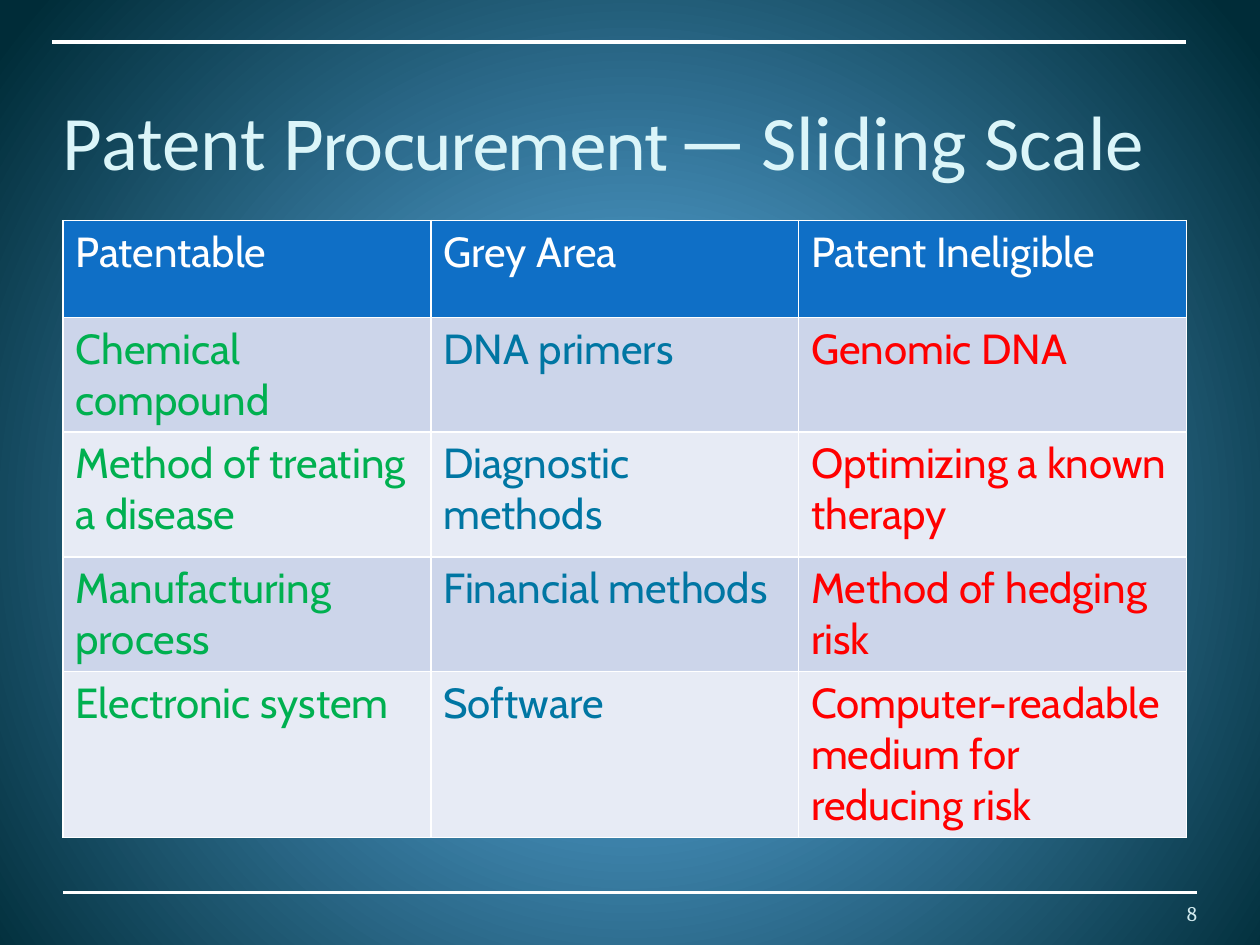
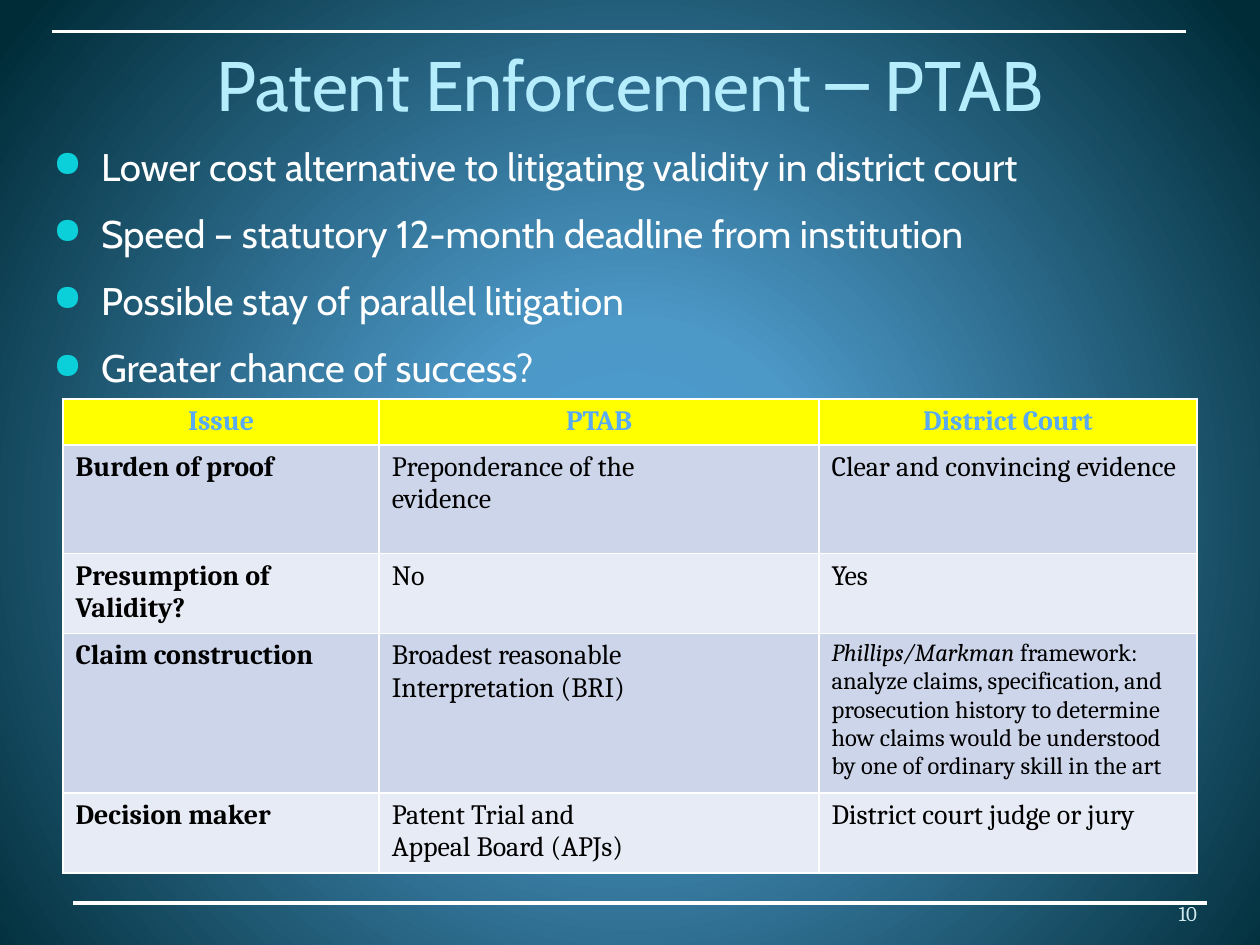
from collections import namedtuple
from dataclasses import dataclass, replace

from pptx import Presentation
from pptx.dml.color import RGBColor
from pptx.enum.shapes import MSO_CONNECTOR
from pptx.enum.text import MSO_ANCHOR, PP_ALIGN
from pptx.oxml import parse_xml
from pptx.oxml.ns import nsdecls, qn
from pptx.oxml.xmlchemy import OxmlElement as new_element
from pptx.util import Inches, Pt

Box = namedtuple("Box", "left top width height")
Rule = namedtuple("Rule", "left right row")


@dataclass(frozen=True)
class Style:
    """The look of a run of text."""
    font: str
    size: int
    color: str
    bold: bool = False
    italic: bool = False


class Theme:
    """Colours, type styles and measures shared by the slides."""
    width, height = Inches(10), Inches(7.5)
    columns, rows = 120, 90
    glow = ((0, "4AA0D6"), (25, "4C98C7"), (100, "002C38"))
    white = "FFFFFF"
    bullet = "0BD0D9"
    bands = ("CCD5EA", "E7EBF5")
    scale_header, court_header = "0F6FC6", "FFFF00"
    rule_weight, border_weight = Pt(2), Pt(1)
    scale_title = Style("Calibri", 44, "DBF5F9")
    court_title = Style("Cabin", 40, "B5EDFD")
    body = Style("Cabin", 22, white)
    scale_head = Style("Cabin", 24, white)
    scale_columns = (replace(scale_head, color="00B050"),
                     replace(scale_head, color="0076A3"),
                     replace(scale_head, color="FF0000"))
    court_head = Style("Cambria", 16, "59AAF2", bold=True)
    court_cell = Style("Cambria", 16, "000000")
    court_issue = replace(court_cell, bold=True)
    court_note = replace(court_cell, size=14)
    number = Style("Cambria", 12, "D1EAEE")


def across(columns):
    """Turn grid columns into a length."""
    return round(Theme.width * columns / Theme.columns)


def down(rows):
    """Turn grid rows into a length."""
    return round(Theme.height * rows / Theme.rows)


def place(box):
    """Turn a box on the grid into left, top, width and height."""
    return across(box.left), down(box.top), across(box.width), down(box.height)


def format_run(run, style):
    """Apply a style to one run."""
    font = run.font
    font.name, font.size = style.font, Pt(style.size)
    font.bold, font.italic = style.bold, style.italic
    font.color.rgb = RGBColor.from_string(style.color)


def add_runs(paragraph, runs):
    """Append runs, each given with its own style."""
    for text, style in runs:
        run = paragraph.add_run()
        run.text = text
        format_run(run, style)


def write(text_frame, text, style, align=PP_ALIGN.LEFT):
    """Write text in one style, a paragraph to each line."""
    text_frame.text = text
    for paragraph in text_frame.paragraphs:
        paragraph.alignment = align
        for run in paragraph.runs:
            format_run(run, style)


def add_text_frame(slide, box, anchor=MSO_ANCHOR.TOP, insets=(0.1, 0.05, 0.1, 0.05)):
    """Add a wrapping text box and return its frame."""
    text_frame = slide.shapes.add_textbox(*place(box)).text_frame
    text_frame.word_wrap = True
    text_frame.vertical_anchor = anchor
    (text_frame.margin_left, text_frame.margin_top,
     text_frame.margin_right, text_frame.margin_bottom) = map(Inches, insets)
    return text_frame


def add_title_frame(slide, box):
    """Add the frame of a title that stands on the bottom of its box."""
    return add_text_frame(slide, box, MSO_ANCHOR.BOTTOM, (0, 0.05, 0, 0))


def add_background(slide):
    """Fill the slide with the radial glow."""
    stops = "".join(f'<a:gs pos="{share * 1000}"><a:srgbClr val="{color}"/></a:gs>'
                    for share, color in Theme.glow)
    slide.background.fill.gradient()
    plain = next(slide.element.iter(qn("a:gradFill")))
    plain.getparent().replace(plain, parse_xml(
        f'<a:gradFill {nsdecls("a")} rotWithShape="1"><a:gsLst>{stops}</a:gsLst>'
        '<a:path path="circle"><a:fillToRect l="10000" t="110000" r="10000" b="100000"/>'
        '</a:path></a:gradFill>'))


def add_rule(slide, rule):
    """Draw a white horizontal rule."""
    height = down(rule.row)
    line = slide.shapes.add_connector(MSO_CONNECTOR.STRAIGHT, across(rule.left), height,
                                      across(rule.right), height)
    line.line.color.rgb = RGBColor.from_string(Theme.white)
    line.line.width = Theme.rule_weight
    line._element.spPr.append(new_element("a:effectLst"))


def add_frame(presentation, number, rules):
    """Add a slide with its background, rules and page number."""
    slide = presentation.slides.add_slide(presentation.slide_layouts[6])
    add_background(slide)
    for rule in rules:
        add_rule(slide, rule)
    number_frame = add_text_frame(slide, Box(104, 83.4, 10, 4.8),
                                  MSO_ANCHOR.BOTTOM, (0, 0, 0, 0))
    write(number_frame, str(number), Theme.number, PP_ALIGN.RIGHT)
    return slide


def add_bullets(slide, box, items):
    """Add a bulleted list."""
    text_frame = add_text_frame(slide, box)
    write(text_frame, "\n".join(items), Theme.body, PP_ALIGN.JUSTIFY)
    for paragraph in text_frame.paragraphs:
        paragraph.space_after = Pt(12)
        properties = paragraph._p.get_or_add_pPr()
        properties.set("marL", str(Inches(0.62)))
        properties.set("indent", str(Inches(-0.38)))
        color = new_element("a:buClr")
        value = new_element("a:srgbClr")
        value.set("val", Theme.bullet)
        color.append(value)
        size = new_element("a:buSzPct")
        size.set("val", "95000")
        mark = new_element("a:buChar")
        mark.set("char", "●")
        properties.extend((color, size, mark))


def paint_cell(cell, color):
    """Border a cell in white and fill it."""
    properties = cell._tc.get_or_add_tcPr()
    for side in "LRTB":
        properties.append(parse_xml(
            f'<a:ln{side} {nsdecls("a")} w="{Theme.border_weight}"><a:solidFill>'
            f'<a:srgbClr val="{Theme.white}"/></a:solidFill></a:ln{side}>'))
    cell.fill.solid()
    cell.fill.fore_color.rgb = RGBColor.from_string(color)


def add_grid(slide, box, column_spans, row_spans, records, header, styles):
    """Add a banded table; header holds its fill, style and alignment."""
    header_fill, header_style, header_align = header
    table = slide.shapes.add_table(len(row_spans), len(column_spans), *place(box)).table
    for column, span in zip(table.columns, column_spans):
        column.width = round(across(box.width) * span / sum(column_spans))
    for row, span in zip(table.rows, row_spans):
        row.height = round(down(box.height) * span / sum(row_spans))
    for row_index, record in enumerate(records):
        for column_index, text in enumerate(record):
            cell = table.cell(row_index, column_index)
            if row_index == 0:
                paint_cell(cell, header_fill)
                write(cell.text_frame, text, header_style, header_align)
            else:
                paint_cell(cell, Theme.bands[(row_index - 1) % 2])
                write(cell.text_frame, text, styles[column_index])
    return table


def build_sliding_scale(presentation):
    """Build the slide that sorts subject matter by eligibility."""
    slide = add_frame(presentation, 8, (Rule(5, 113, 4), Rule(6, 114, 85)))
    title = Theme.scale_title
    title_frame = add_title_frame(slide, Box(6, 9, 108, 8.75))
    add_runs(title_frame.paragraphs[0], (
        ("Patent ", title),
        ("Procurement", replace(title, font="Cabin", size=40)),
        (" ", title),
        ("─ ", replace(title, font="Arial")),
        ("Sliding Scale", title),
    ))
    records = (
        ("Patentable", "Grey Area", "Patent Ineligible"),
        ("Chemical compound", "DNA primers", "Genomic DNA"),
        ("Method of treating a disease", "Diagnostic methods", "Optimizing a known therapy"),
        ("Manufacturing process", "Financial methods", "Method of hedging risk"),
        ("Electronic system", "Software", "Computer-readable medium for reducing risk"),
    )
    add_grid(slide, Box(6, 21, 107, 58.8), (2.92, 2.92, 3.08),
             (0.77, 0.91, 0.99, 0.91, 1.32), records,
             (Theme.scale_header, Theme.scale_head, PP_ALIGN.LEFT), Theme.scale_columns)


def build_enforcement(presentation):
    """Build the slide that compares the board with the district court."""
    slide = add_frame(presentation, 10, (Rule(5, 113, 3), Rule(7, 115, 86)))
    write(add_title_frame(slide, Box(2, 1, 116, 11)), "Patent Enforcement ─ PTAB",
          Theme.court_title, PP_ALIGN.CENTER)
    add_bullets(slide, Box(1, 13, 118, 66), (
        "Lower cost alternative to litigating validity in district court",
        "Speed – statutory 12-month deadline from institution",
        "Possible stay of parallel litigation",
        "Greater chance of success?",
    ))
    records = (
        ("Issue", "PTAB", "District Court"),
        ("Burden of proof", "Preponderance of the\nevidence",
         "Clear and convincing evidence"),
        ("Presumption of Validity?", "No", "Yes"),
        ("Claim construction", "Broadest reasonable\nInterpretation (BRI)", ""),
        ("Decision maker", "Patent Trial and\nAppeal Board (APJs)",
         "District court judge or jury"),
    )
    table = add_grid(slide, Box(6, 38, 108, 43.8), (2.51, 3.49, 3),
                     (0.36, 0.86, 0.61, 1.22, 0.6), records,
                     (Theme.court_header, Theme.court_head, PP_ALIGN.CENTER),
                     (Theme.court_issue, Theme.court_cell, Theme.court_cell))
    add_runs(table.cell(3, 2).text_frame.paragraphs[0], (
        ("Phillips/Markman ", replace(Theme.court_note, italic=True)),
        ("framework: analyze claims, specification, and prosecution history to determine "
         "how claims would be understood by one of ordinary skill in the art",
         Theme.court_note),
    ))


def main():
    """Build the presentation and save it."""
    presentation = Presentation()
    presentation.slide_width, presentation.slide_height = Theme.width, Theme.height
    build_sliding_scale(presentation)
    build_enforcement(presentation)
    presentation.save("out.pptx")


if __name__ == "__main__":
    main()
